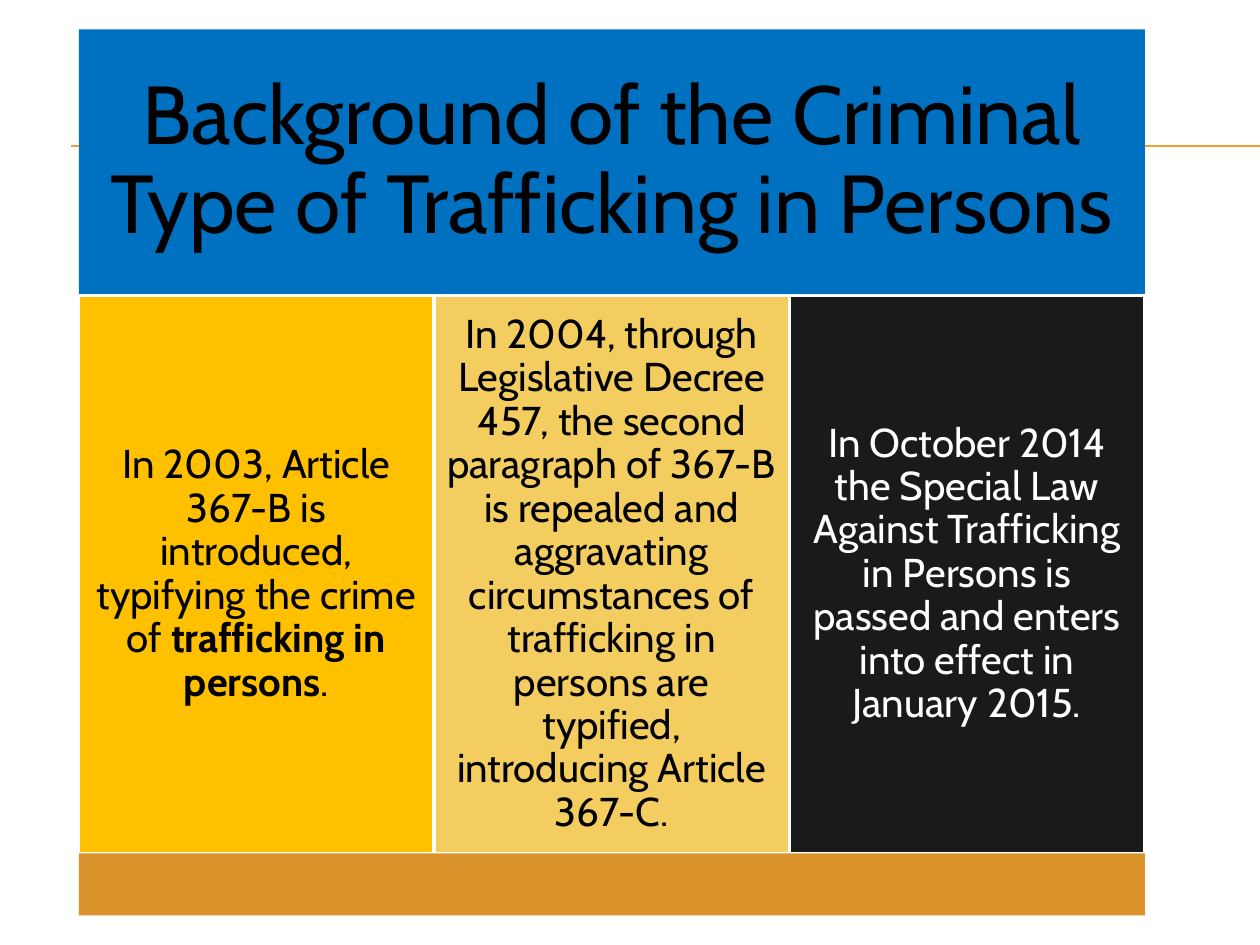
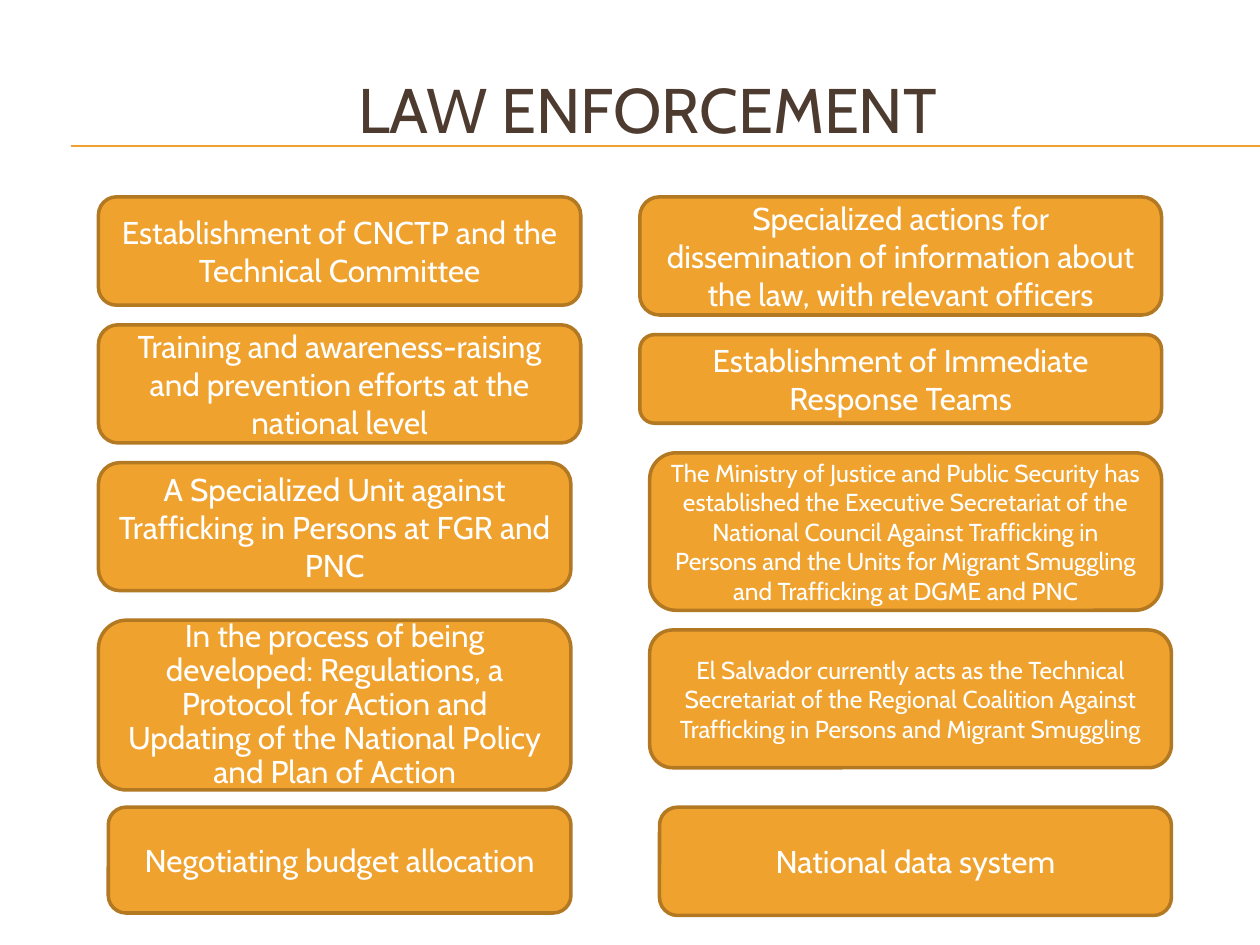
from dataclasses import dataclass
from typing import Any

from lxml.etree import SubElement
from pptx import Presentation
from pptx.dml.color import RGBColor
from pptx.enum.shapes import MSO_CONNECTOR, MSO_SHAPE
from pptx.enum.text import MSO_ANCHOR, PP_ALIGN
from pptx.oxml.ns import qn
from pptx.presentation import Presentation as Deck
from pptx.shapes.autoshape import Shape
from pptx.slide import Slide
from pptx.text.text import TextFrame
from pptx.util import Inches, Pt

COLUMNS = 128
ROWS = 96
SLIDE_WIDTH = Inches(10)
SLIDE_HEIGHT = Inches(7.5)


@dataclass(frozen=True)
class Theme:
    font: str = "Cabin"
    black: str = "000000"
    white: str = "FFFFFF"
    brown: str = "4E3B30"
    orange: str = "F0A22E"
    dark_orange: str = "B27822"
    blue: str = "0070C0"
    yellow: str = "FFC000"
    sand: str = "F3CD60"
    charcoal: str = "1A1A1A"
    footer: str = "DA932A"
    banner_size: float = 47
    title_size: float = 36
    card_size: float = 23
    measure_size: float = 18
    small_size: float = 14
    rule_width: float = 0.75
    outline_width: float = 2


THEME = Theme()


@dataclass(frozen=True)
class Area:
    column: float
    row: float
    columns: float
    rows: float

    def box(self) -> tuple[int, int, int, int]:
        return (across(self.column), down(self.row), across(self.columns), down(self.rows))


@dataclass(frozen=True)
class Run:
    text: str
    bold: bool = False


@dataclass(frozen=True)
class TextStyle:
    size: float
    color: str
    spacing: float = 1.0
    margin_x: float = 0.1
    margin_y: float = 0.05
    indent: float = 0.0


@dataclass(frozen=True)
class Card:
    fill: str
    color: str
    runs: tuple[Run, ...]


@dataclass(frozen=True)
class Measure:
    area: Area
    text: str
    size: float = THEME.measure_size
    spacing: float = 1.0


BANNER_ROW = 3
BANNER_ROWS = 27
CARD_ROWS = 56.7
PANEL_COLUMN = 8
PANEL_COLUMNS = 108.3

CARDS = (
    Card(THEME.yellow, THEME.black, (
        Run("In 2003, Article 367-B is introduced, typifying the crime of "),
        Run("trafficking in persons", bold=True),
        Run("."),
    )),
    Card(THEME.sand, THEME.black, (
        Run("In 2004, through Legislative Decree 457, the second paragraph of 367-B is repealed "
            "and aggravating circumstances of trafficking in persons are typified, "
            "introducing Article 367-C."),
    )),
    Card(THEME.charcoal, THEME.white, (
        Run("In October 2014 the Special Law Against Trafficking in Persons is passed "
            "and enters into effect in January 2015."),
    )),
)

MEASURES = (
    Measure(Area(10, 20, 49, 11), "Establishment of CNCTP and the Technical Committee"),
    Measure(Area(10, 33, 49, 12),
            "Training and awareness-raising and prevention efforts at the national level"),
    Measure(Area(10, 47, 48, 13),
            "A Specialized Unit against Trafficking in Persons at FGR and PNC"),
    Measure(Area(10, 63, 48, 17.25),
            "In the process of being developed: Regulations, a Protocol for Action and "
            "Updating of the National Policy and Plan of Action", spacing=0.9),
    Measure(Area(11, 82, 47, 10.75), "Negotiating budget allocation"),
    Measure(Area(65, 20, 53, 12),
            "Specialized actions for dissemination of information about the law, "
            "with relevant officers"),
    Measure(Area(65, 34, 53, 9), "Establishment of Immediate Response Teams"),
    Measure(Area(66, 46, 52, 16),
            "The Ministry of Justice and Public Security has established the Executive "
            "Secretariat of the National Council Against Trafficking in Persons and the "
            "Units for Migrant Smuggling and Trafficking at DGME and PNC", THEME.small_size),
    Measure(Area(66, 64, 53, 14),
            "El Salvador currently acts as the Technical Secretariat of the Regional Coalition "
            "Against Trafficking in Persons and Migrant Smuggling", THEME.small_size),
    Measure(Area(67, 82, 52, 11), "National data system"),
)


def across(columns: float) -> int:
    return round(SLIDE_WIDTH * columns / COLUMNS)


def down(rows: float) -> int:
    return round(SLIDE_HEIGHT * rows / ROWS)


def apply(target: Any, values: dict[str, Any]) -> None:
    for name, value in values.items():
        setattr(target, name, value)


def write_text(frame: TextFrame, runs: tuple[Run, ...], style: TextStyle) -> None:
    apply(frame, {
        "word_wrap": True,
        "vertical_anchor": MSO_ANCHOR.MIDDLE,
        "margin_left": Inches(style.margin_x + style.indent),
        "margin_right": Inches(style.margin_x),
        "margin_top": Inches(style.margin_y),
        "margin_bottom": Inches(style.margin_y),
    })
    paragraph = frame.paragraphs[0]
    apply(paragraph, {"alignment": PP_ALIGN.CENTER, "line_spacing": style.spacing})
    for item in runs:
        run = paragraph.add_run()
        run.text = item.text
        apply(run.font, {"name": THEME.font, "size": Pt(style.size), "bold": item.bold})
        run.font.color.rgb = RGBColor.from_string(style.color)


def add_block(slide: Slide, kind: MSO_SHAPE, area: Area, fill: str,
              outline: str | None = None) -> Shape:
    shape = slide.shapes.add_shape(kind, *area.box())
    shape.shadow.inherit = False
    shape.fill.solid()
    shape.fill.fore_color.rgb = RGBColor.from_string(fill)
    if outline is None:
        shape.line.fill.background()
    else:
        shape.line.color.rgb = RGBColor.from_string(outline)
        shape.line.width = Pt(THEME.outline_width)
    return shape


def add_ruled_slide(presentation: Deck) -> Slide:
    slide = presentation.slides.add_slide(presentation.slide_layouts[6])
    for row in (14.75, 14.85):
        rule = slide.shapes.add_connector(
            MSO_CONNECTOR.STRAIGHT, across(7.2), down(row), across(COLUMNS), down(row))
        rule.line.color.rgb = RGBColor.from_string(THEME.orange)
        rule.line.width = Pt(THEME.rule_width)
        SubElement(rule._element.spPr, qn("a:effectLst"))
    return slide


def build_background(presentation: Deck) -> None:
    slide = add_ruled_slide(presentation)
    banner = add_block(slide, MSO_SHAPE.RECTANGLE,
                       Area(PANEL_COLUMN, BANNER_ROW, PANEL_COLUMNS, BANNER_ROWS), THEME.blue)
    write_text(banner.text_frame,
               (Run("Background of the Criminal Type of Trafficking in Persons"),),
               TextStyle(THEME.banner_size, THEME.black, 0.9, 0.2, 0.2))
    card_row = BANNER_ROW + BANNER_ROWS
    card_columns = PANEL_COLUMNS / len(CARDS)
    for index, card in enumerate(CARDS):
        area = Area(PANEL_COLUMN + index * card_columns, card_row, card_columns, CARD_ROWS)
        shape = add_block(slide, MSO_SHAPE.RECTANGLE, area, card.fill, THEME.white)
        write_text(shape.text_frame, card.runs,
                   TextStyle(THEME.card_size, card.color, 0.9, 0.1, 0.1))
    add_block(slide, MSO_SHAPE.RECTANGLE,
              Area(PANEL_COLUMN, card_row + CARD_ROWS, PANEL_COLUMNS, 6.3), THEME.footer)


def build_enforcement(presentation: Deck) -> None:
    slide = add_ruled_slide(presentation)
    title = slide.shapes.add_textbox(*Area(4.2, 5, 121.6, 12).box())
    write_text(title.text_frame, (Run("LAW ENFORCEMENT"),),
               TextStyle(THEME.title_size, THEME.brown, indent=0.12))
    for measure in MEASURES:
        shape = add_block(slide, MSO_SHAPE.ROUNDED_RECTANGLE, measure.area,
                          THEME.orange, THEME.dark_orange)
        write_text(shape.text_frame, (Run(measure.text),),
                   TextStyle(measure.size, THEME.white, measure.spacing))


def main() -> None:
    presentation = Presentation()
    apply(presentation, {"slide_width": SLIDE_WIDTH, "slide_height": SLIDE_HEIGHT})
    build_background(presentation)
    build_enforcement(presentation)
    presentation.save("out.pptx")


if __name__ == "__main__":
    main()
